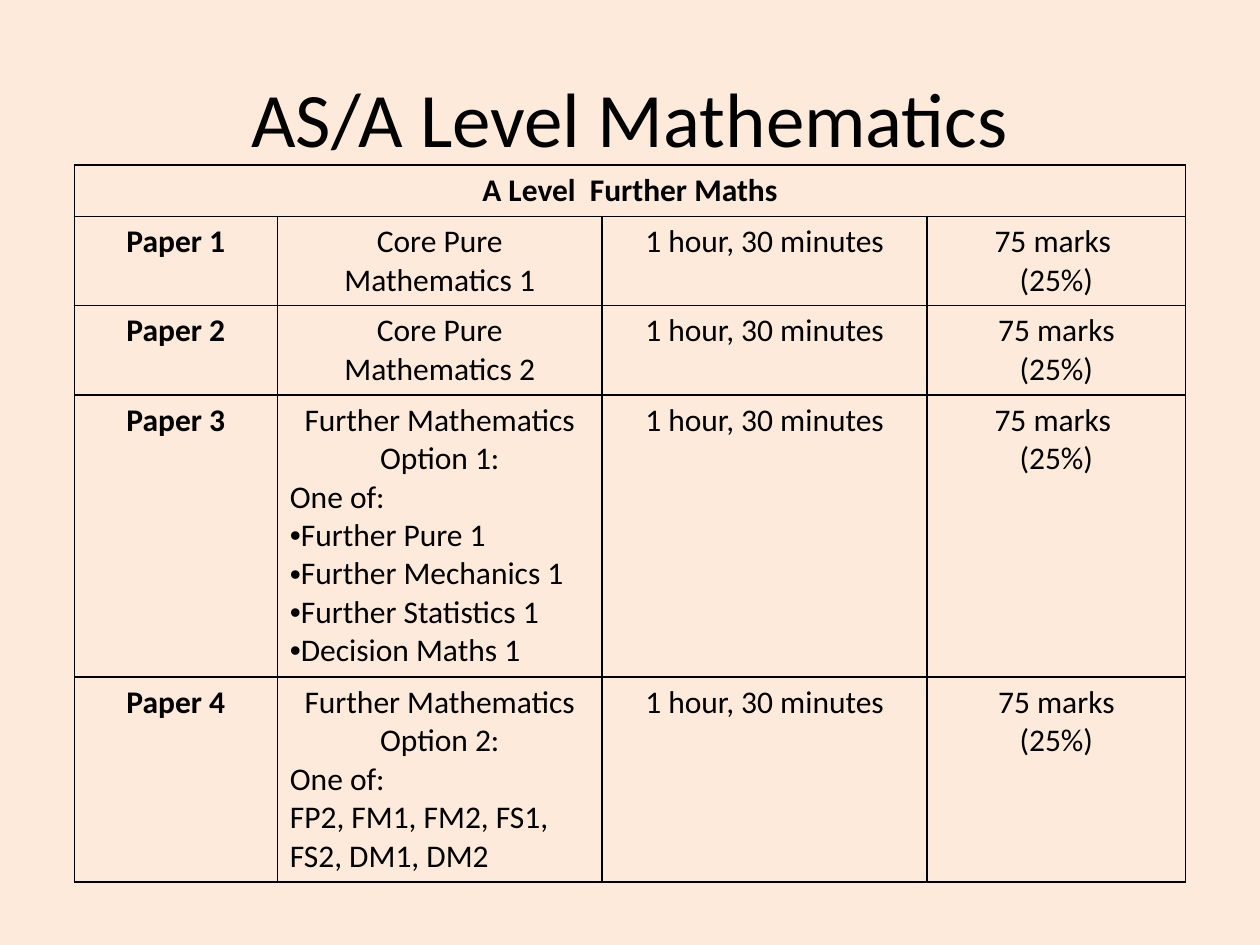
from lxml import etree
from pptx import Presentation
from pptx import util as u
from pptx.dml.color import RGBColor
from pptx.enum import text
from pptx.oxml import ns

BLACK = RGBColor(0x00, 0x00, 0x00)
PEACH = RGBColor(0xFD, 0xEA, 0xDA)
FONT = "Calibri"
BULLET = "•"
DURATION = "1 hour, 30 minutes"


def style(paragraph, size, bold=False):
    for span in paragraph.runs:
        span.font.name = FONT
        span.font.size = u.Pt(size)
        span.font.bold = bold
        span.font.color.rgb = BLACK


def add_borders(cell):
    properties = cell._tc.get_or_add_tcPr()
    for position, side in enumerate(("lnL", "lnR", "lnT", "lnB")):
        line = etree.Element(ns.qn(f"a:{side}"), w=str(u.Pt(1)))
        fill = etree.SubElement(line, ns.qn("a:solidFill"))
        etree.SubElement(fill, ns.qn("a:srgbClr"), val=str(BLACK))
        properties.insert(position, line)


deck = Presentation()
deck.slide_width = u.Cm(25.4)
deck.slide_height = u.Cm(19.05)
page = deck.slides.add_slide(deck.slide_layouts[6])
page.background.fill.solid()
page.background.fill.fore_color.rgb = PEACH

title = page.shapes.add_textbox(u.Cm(1.27), u.Cm(0.76), u.Cm(22.86), u.Cm(3.18))
title.text_frame.word_wrap = True
title.text_frame.vertical_anchor = text.MSO_ANCHOR.MIDDLE
title.text_frame.text = "AS/A Level Mathematics"
title.text_frame.paragraphs[0].alignment = text.PP_ALIGN.CENTER
style(title.text_frame.paragraphs[0], 44)

rows = [
    ["A Level  Further Maths", "", "", ""],
    ["Paper 1", "Core Pure Mathematics 1", DURATION, "75 marks \n(25%)"],
    ["Paper 2", "Core Pure Mathematics 2", DURATION, "75 marks\n(25%)"],
    [
        "Paper 3",
        "Further Mathematics Option 1:\nOne of:\n•Further Pure 1\n"
        "•Further Mechanics 1\n•Further Statistics 1\n•Decision Maths 1",
        DURATION,
        "75 marks \n(25%)",
    ],
    [
        "Paper 4",
        "Further Mathematics Option 2:\nOne of:\nFP2, FM1, FM2, FS1, FS2, DM1, DM2",
        DURATION,
        "75 marks\n(25%)",
    ],
]
widths = [4.09, 6.55, 6.55, 5.21]
heights = [1.03, 1.8, 1.8, 5.69, 4.13]

table = page.shapes.add_table(
    len(rows), len(widths), u.Cm(1.5), u.Cm(3.33), u.Cm(sum(widths)), u.Cm(sum(heights))
).table
for column, width in zip(table.columns, widths):
    column.width = u.Cm(width)
for row, height in zip(table.rows, heights):
    row.height = u.Cm(height)
table.cell(0, 0).merge(table.cell(0, 3))

for row_index, row in enumerate(rows):
    for column_index, content in enumerate(row):
        cell = table.cell(row_index, column_index)
        cell.fill.background()
        add_borders(cell)
        if not content:
            continue
        cell.text_frame.text = content.replace(BULLET, "")
        lines = content.split("\n")
        for index, (para, line) in enumerate(zip(cell.text_frame.paragraphs, lines)):
            if column_index != 1 or index == 0:
                para.alignment = text.PP_ALIGN.CENTER
            if line.startswith(BULLET):
                properties = para._p.get_or_add_pPr()
                etree.SubElement(properties, ns.qn("a:buFont"), typeface="Arial")
                etree.SubElement(properties, ns.qn("a:buChar"), char=BULLET)
            style(para, 18, bold=column_index == 0)

deck.save("out.pptx")
